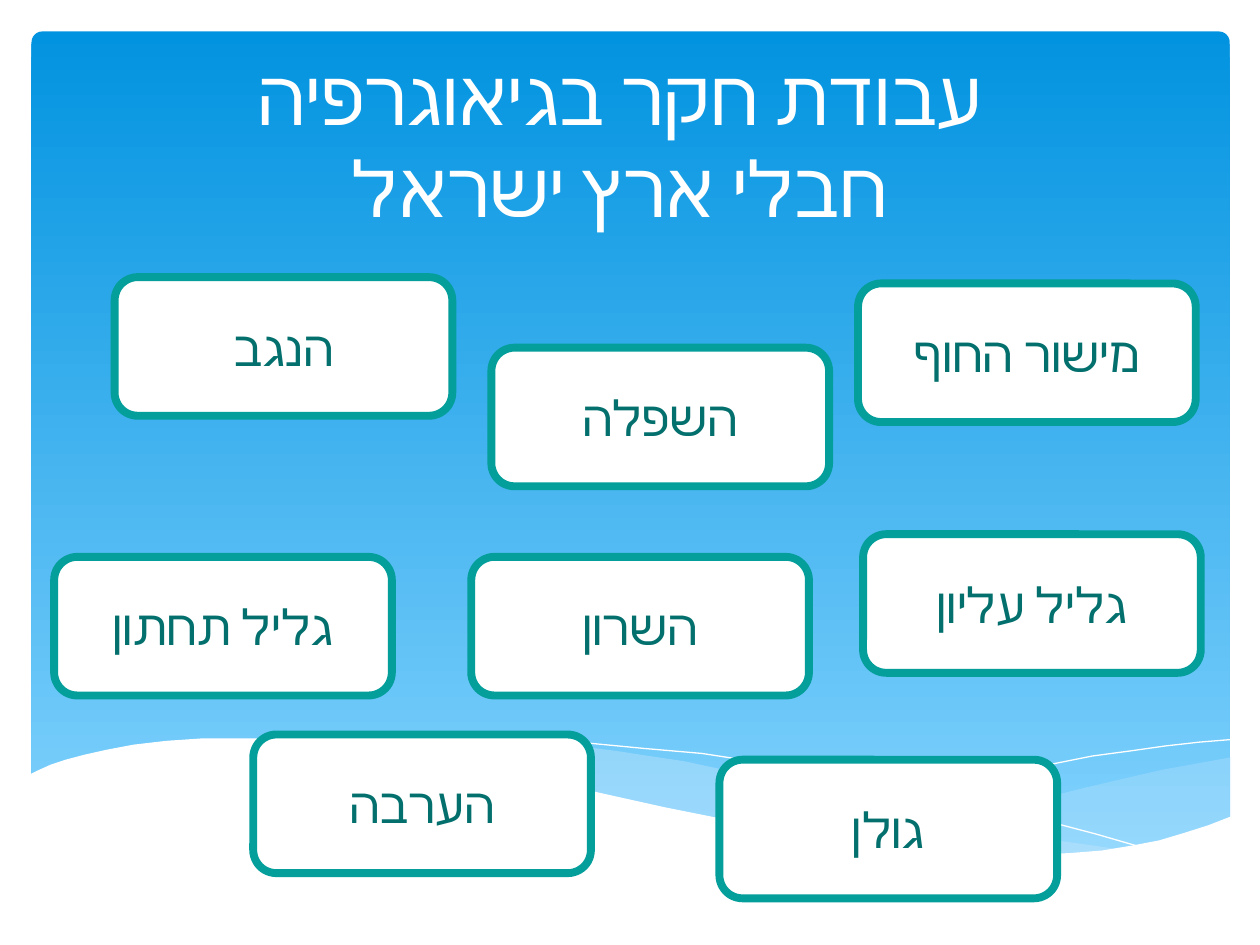
import pptx
import pptx.util
import pptx.dml.color
import pptx.enum.shapes
import pptx.enum.text
import pptx.oxml
import pptx.oxml.ns

Inches = pptx.util.Inches
Pt = pptx.util.Pt
RGBColor = pptx.dml.color.RGBColor
ROUND = pptx.enum.shapes.MSO_SHAPE.ROUNDED_RECTANGLE

WHITE = RGBColor(0xFF, 0xFF, 0xFF)
SKY_TOP = RGBColor(0x02, 0x93, 0xE0)
SKY_END = RGBColor(0x83, 0xD3, 0xFE)
MIST = RGBColor(0xC6, 0xE7, 0xFC)
TEAL = RGBColor(0x04, 0x9E, 0x9B)
DARK = RGBColor(0x03, 0x70, 0x6E)

deck = pptx.Presentation()
deck.slide_width = Inches(10)
deck.slide_height = Inches(7.5)
slide = deck.slides.add_slide(deck.slide_layouts[6])
shapes = slide.shapes


def draw(points, alpha=None):
    """Draw a filled wave, or an open white hairline when alpha is None."""
    spots = [(Inches(x), Inches(y)) for x, y in points]
    pen = shapes.build_freeform(*spots[0])
    pen.add_line_segments(spots[1:], close=alpha is not None)
    wave = pen.convert_to_shape()
    wave.shadow.inherit = False
    if alpha is None:
        wave.fill.background()
        wave.line.color.rgb = WHITE
        wave.line.width = Pt(0)
        return
    wave.line.fill.background()
    wave.fill.solid()
    wave.fill.fore_color.rgb = WHITE if alpha == 100 else MIST
    if alpha < 100:
        tint = wave.fill._xPr.find(".//" + pptx.oxml.ns.qn("a:srgbClr"))
        node = pptx.oxml.parse_xml(
            "<a:alpha %s/>" % pptx.oxml.ns.nsdecls("a"))
        node.set("val", str(alpha * 1000))
        tint.append(node)


def write(shape, text, size, color, anchor):
    """Set centred right-to-left text."""
    frame = shape.text_frame
    frame.word_wrap = True
    frame.vertical_anchor = anchor
    frame.text = text
    para = frame.paragraphs[0]
    para.alignment = pptx.enum.text.PP_ALIGN.CENTER
    para._p.get_or_add_pPr().set("rtl", "1")
    for run in para.runs:
        run.font.size = Pt(size)
        run.font.color.rgb = color
        run.font.name = "Calibri"
        # Hebrew takes the complex-script font
        run.font._element.append(pptx.oxml.parse_xml(
            '<a:cs %s typeface="Calibri"/>' % pptx.oxml.ns.nsdecls("a")))


# Sky
sky = shapes.add_shape(ROUND, Inches(0.25), Inches(0.25),
                       Inches(9.51), Inches(6.6))
sky.adjustments[0] = 0.013
sky.shadow.inherit = False
sky.line.fill.background()
sky.fill.gradient()
sky.fill.gradient_angle = 270
for stop, color in zip(sky.fill.gradient_stops, (SKY_TOP, SKY_END)):
    stop.color.rgb = color

# Pale waves
draw([(9.77, 6.01), (9.5, 6.06), (9.22, 6.11), (8.92, 6.18), (8.62, 6.25),
      (8.06, 6.39), (7.54, 6.5), (7.07, 6.59), (6.62, 6.67), (6.92, 6.71),
      (7.19, 6.74), (7.46, 6.77), (7.7, 6.79), (8.04, 6.8), (8.36, 6.79),
      (8.64, 6.77), (8.9, 6.74), (9.14, 6.69), (9.37, 6.63), (9.64, 6.54),
      (9.77, 6.49)], 29)
draw([(8.94, 6.75), (8.67, 6.71), (8.38, 6.67), (8.08, 6.62), (7.76, 6.56),
      (7.42, 6.49), (7.07, 6.42), (6.69, 6.33), (6.3, 6.24), (5.99, 6.16),
      (5.7, 6.1), (5.42, 6.04), (5.15, 6), (4.89, 5.96), (4.65, 5.93),
      (4.2, 5.89), (3.8, 5.87), (3.45, 5.88), (3.14, 5.9), (2.87, 5.93),
      (3.23, 5.98), (3.63, 6.04), (4.05, 6.13), (4.5, 6.24), (4.91, 6.34),
      (5.3, 6.42), (5.67, 6.5), (6.02, 6.57), (6.35, 6.63), (6.66, 6.68),
      (6.96, 6.72), (7.23, 6.76), (7.49, 6.78), (7.86, 6.8), (8.39, 6.8),
      (8.68, 6.78)], 40)

# White hairlines
draw([(3.1, 5.97), (3.29, 5.94), (3.53, 5.91), (3.88, 5.89), (4.33, 5.89),
      (4.69, 5.9), (5.11, 5.94), (5.57, 5.98), (6.09, 6.06), (6.66, 6.15),
      (6.96, 6.21), (7.28, 6.28), (7.61, 6.35), (7.96, 6.43), (8.32, 6.52),
      (8.7, 6.62), (9.08, 6.73)])
draw([(6.14, 6.59), (6.53, 6.48), (6.96, 6.37), (7.49, 6.25), (8.07, 6.12),
      (8.67, 6), (8.97, 5.96), (9.25, 5.92), (9.52, 5.89), (9.76, 5.87)])

# White ground
draw([(9.77, 6.48), (9.59, 6.55), (9.4, 6.61), (9.2, 6.67), (8.99, 6.71),
      (8.75, 6.75), (8.5, 6.77), (8.09, 6.79), (7.78, 6.78), (7.44, 6.76),
      (7.08, 6.72), (6.68, 6.67), (6.26, 6.6), (5.79, 6.51), (5.29, 6.41),
      (4.75, 6.29), (4.18, 6.15), (3.91, 6.09), (3.65, 6.04), (3.4, 5.99),
      (3.16, 5.96), (2.92, 5.92), (2.71, 5.9), (2.5, 5.88), (2.11, 5.86),
      (1.61, 5.86), (1.32, 5.88), (1.06, 5.91), (0.85, 5.95), (0.67, 5.99),
      (0.52, 6.03), (0.4, 6.07), (0.29, 6.12), (0.23, 6.15), (0.23, 7.31),
      (9.77, 7.31)], 100)

# Title
title = shapes.add_textbox(Inches(0.67), Inches(0.29),
                           Inches(8.5), Inches(1.61))
write(title, "עבודת חקר בגיאוגרפיה\vחבלי ארץ ישראל", 44, WHITE,
      pptx.enum.text.MSO_ANCHOR.BOTTOM)

# Region cards
for name, left, top in [
    ("מישור החוף", 6.81, 2.25),
    ("גליל עליון", 6.85, 4.24),
    ("השפלה", 3.9, 2.76),
    ("גליל תחתון", 0.43, 4.42),
    ("הנגב", 0.91, 2.2),
    ("השרון", 3.74, 4.42),
    ("הערבה", 2.01, 5.83),
    ("גולן", 5.71, 6.03),
]:
    card = shapes.add_shape(ROUND, Inches(left), Inches(top),
                            Inches(2.68), Inches(1.1))
    card.shadow.inherit = False
    card.fill.solid()
    card.fill.fore_color.rgb = WHITE
    card.line.color.rgb = TEAL
    card.line.width = Pt(4.5)
    write(card, name, 28, DARK, pptx.enum.text.MSO_ANCHOR.MIDDLE)

deck.save("out.pptx")
